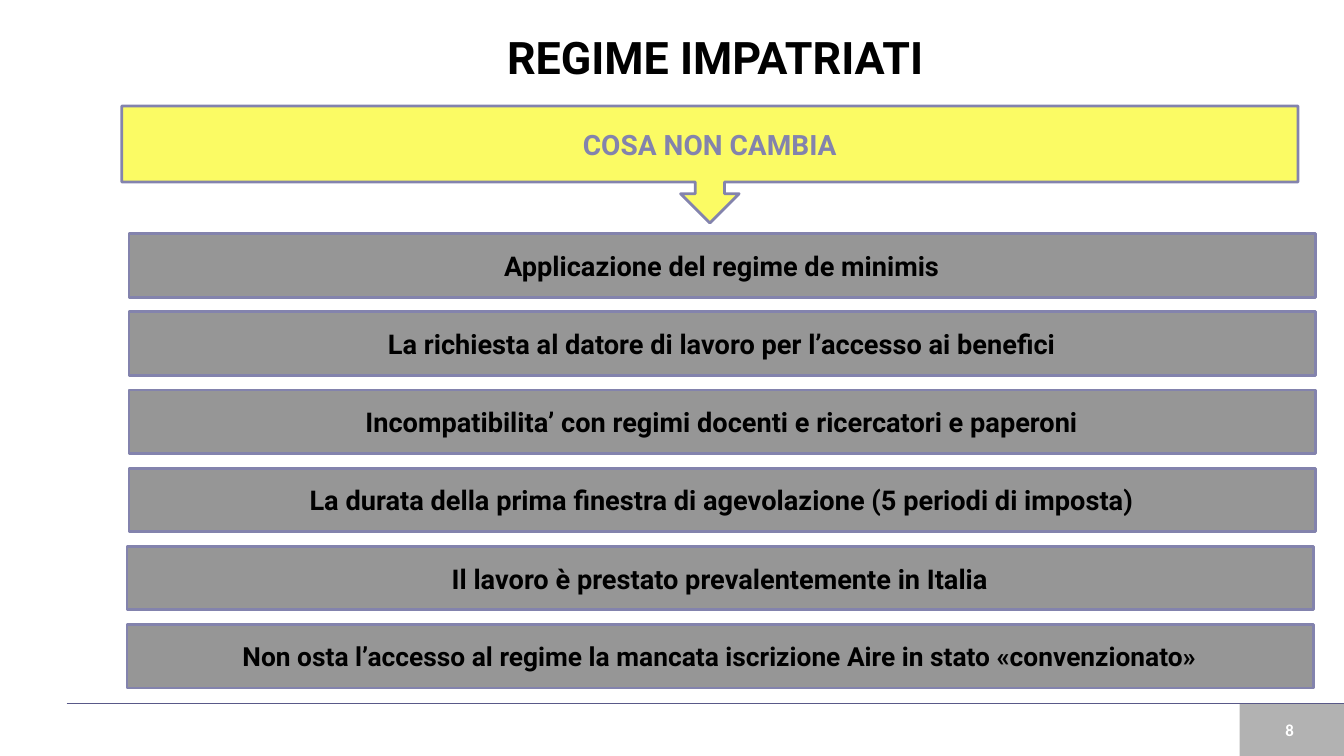
"""Build the "Regime impatriati" slide listing what does not change."""
from dataclasses import dataclass

from lxml.etree import SubElement
from pptx import Presentation
from pptx.dml.color import RGBColor
from pptx.enum.shapes import MSO_CONNECTOR, MSO_SHAPE as Preset
from pptx.enum.text import MSO_ANCHOR, PP_ALIGN
from pptx.oxml.ns import qn
from pptx.shapes.autoshape import Shape
from pptx.slide import Slide
from pptx.text.text import TextFrame
from pptx.util import Cm, Pt

BLACK = RGBColor(0x00, 0x00, 0x00)
WHITE = RGBColor(0xFF, 0xFF, 0xFF)
YELLOW = RGBColor(0xFB, 0xFB, 0x64)
GREY = RGBColor(0x96, 0x96, 0x96)
LILAC = RGBColor(0x83, 0x83, 0xAD)
INDIGO = RGBColor(0x59, 0x59, 0x88)

FIRST_RULE_TOP = 5.89
RULE_PITCH = 1.97


@dataclass(frozen=True)
class Box:
    """Place of an element, in centimetres."""
    left: float
    top: float
    width: float
    height: float

    def lengths(self) -> tuple[Cm, Cm, Cm, Cm]:
        """Return the place as python-pptx lengths."""
        return Cm(self.left), Cm(self.top), Cm(self.width), Cm(self.height)


@dataclass(frozen=True)
class UnchangedRule:
    """One rule of the regime that stays as it is."""
    wording: str
    left: float = 3.25
    size: float = 19.4


UNCHANGED_RULES = (
    UnchangedRule("Applicazione del regime de minimis"),
    UnchangedRule("La richiesta al datore di lavoro per l’accesso ai benefici"),
    UnchangedRule("Incompatibilita’ con regimi docenti e ricercatori e paperoni"),
    UnchangedRule("La durata della prima finestra di agevolazione (5 periodi di imposta)"),
    UnchangedRule("Il lavoro è prestato prevalentemente in Italia", left=3.2),
    UnchangedRule("Non osta l’accesso al regime la mancata iscrizione Aire in stato «convenzionato»",
                  left=3.2, size=18.8),
)


def write(frame: TextFrame, text: str, *, size: float, color: RGBColor = BLACK,
          font: str = "Roboto", wrap: bool = True) -> None:
    """Write bold text in the centre of a frame."""
    frame.word_wrap = wrap
    frame.vertical_anchor = MSO_ANCHOR.MIDDLE
    paragraph = frame.paragraphs[0]
    paragraph.alignment = PP_ALIGN.CENTER
    run = paragraph.add_run()
    run.text = text
    run.font.name = font
    run.font.size = Pt(size)
    run.font.bold = True
    run.font.color.rgb = color


def add_panel(slide: Slide, preset: Preset, box: Box, fill: RGBColor) -> Shape:
    """Add a filled panel with a lilac outline."""
    panel = slide.shapes.add_shape(preset, *box.lengths())
    panel.shadow.inherit = False
    panel.fill.solid()
    panel.fill.fore_color.rgb = fill
    panel.line.color.rgb = LILAC
    panel.line.width = Pt(2)
    return panel


def add_footer(slide: Slide, number: str) -> None:
    """Add the page number on its translucent tab and the line above."""
    tab = add_panel(slide, Preset.RECTANGLE, Box(31.24, 17.73, 2.72, 1.35), BLACK)
    tab.line.fill.background()
    tint = tab.fill._xPr.find(qn("a:solidFill")).find(qn("a:srgbClr"))
    SubElement(tint, qn("a:alpha"), val="30000")

    page = slide.shapes.add_textbox(*Box(31.14, 17.73, 2.72, 1.32).lengths())
    write(page.text_frame, number, size=12, color=WHITE, font="Calibri", wrap=False)

    divider = slide.shapes.add_connector(
        MSO_CONNECTOR.STRAIGHT, Cm(1.68), Cm(17.73), Cm(33.96), Cm(17.73))
    divider.line.color.rgb = INDIGO
    divider.line.width = Pt(1)
    SubElement(divider._element.spPr, qn("a:effectLst"))


def main() -> None:
    """Build and save the presentation."""
    deck = Presentation()
    deck.slide_width, deck.slide_height = Cm(33.87), Cm(19.05)
    slide = deck.slides.add_slide(deck.slide_layouts[6])

    add_footer(slide, "8")

    title = slide.shapes.add_textbox(*Box(2.18, 0.66, 31.7, 1.52).lengths())
    write(title.text_frame, "REGIME IMPATRIATI", size=32)

    heading = add_panel(slide, Preset.DOWN_ARROW_CALLOUT, Box(3.07, 2.67, 29.64, 2.95), YELLOW)
    write(heading.text_frame, "COSA NON CAMBIA", size=20, color=LILAC)

    for row, rule in enumerate(UNCHANGED_RULES):
        box = Box(rule.left, FIRST_RULE_TOP + row * RULE_PITCH, 29.9, 1.6)
        panel = add_panel(slide, Preset.RECTANGLE, box, GREY)
        write(panel.text_frame, rule.wording, size=rule.size)

    deck.save("out.pptx")


if __name__ == "__main__":
    main()
